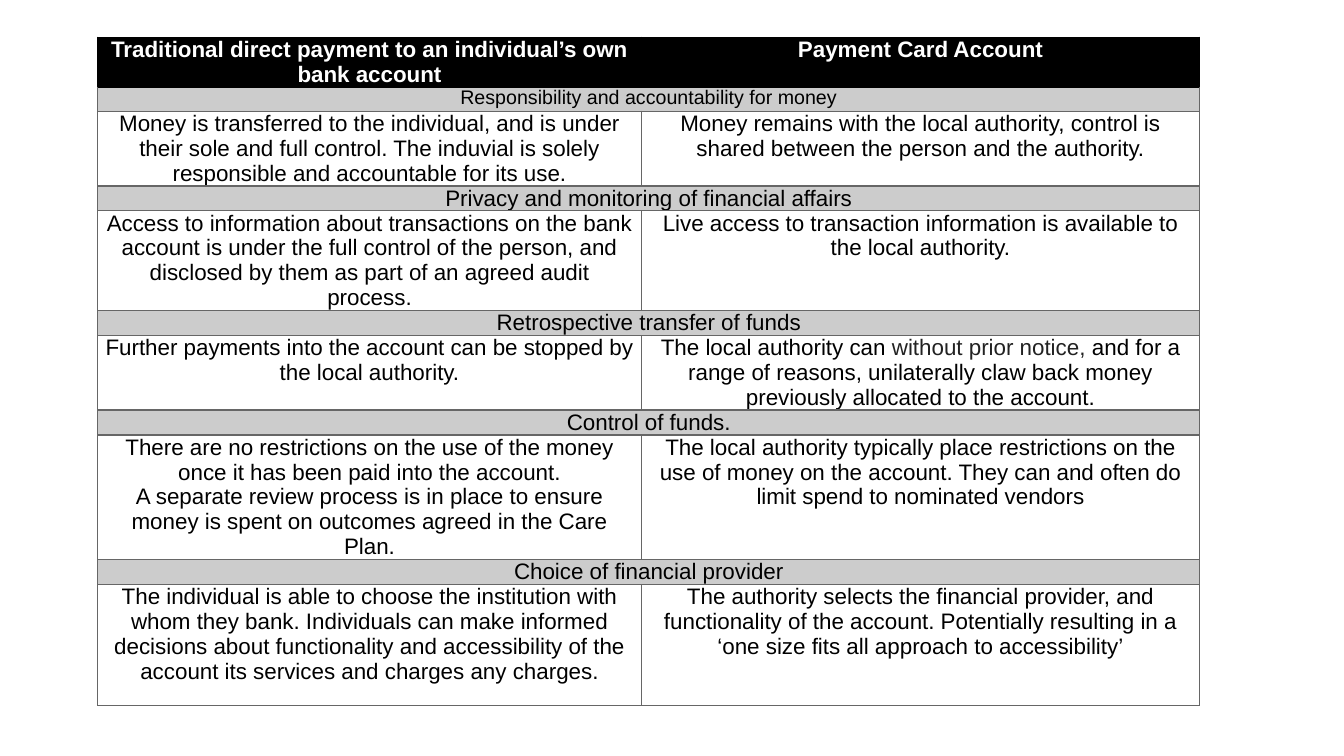
import pptx
import pptx.util
import pptx.dml.color
import pptx.enum.text
import pptx.oxml
import pptx.oxml.ns

BLACK = pptx.dml.color.RGBColor(0x00, 0x00, 0x00)
WHITE = pptx.dml.color.RGBColor(0xFF, 0xFF, 0xFF)
BAND = pptx.dml.color.RGBColor(0xCC, 0xCC, 0xCC)
RULE = pptx.dml.color.RGBColor(0x66, 0x66, 0x66)
SOFT = pptx.dml.color.RGBColor(0x22, 0x22, 0x22)

HEADINGS = ("Traditional direct payment to an individual’s own bank account",
            "Payment Card Account")
SOFT_PHRASE = "without prior notice,"

# Each topic: title, title size, text lines of room, left text, right text
TOPICS = [
    ("Responsibility and accountability for money", 14, 3,
     "Money is transferred to the individual, and is under their sole and full control. "
     "The induvial is solely responsible and accountable for its use.",
     "Money remains with the local authority, control is shared between the person "
     "and the authority."),
    ("Privacy and monitoring of financial affairs", 16, 4,
     "Access to information about transactions on the bank account is under the full "
     "control of the person, and disclosed by them as part of an agreed audit process.",
     "Live access to transaction information is available to the local authority."),
    ("Retrospective transfer of funds", 16, 3,
     "Further payments into the account can be stopped by the local authority.",
     "The local authority can without prior notice, and for a range of reasons, "
     "unilaterally claw back money previously allocated to the account."),
    ("Control of funds.", 16, 5,
     "There are no restrictions on the use of the money once it has been paid into "
     "the account.\nA separate review process is in place to ensure money is spent on "
     "outcomes agreed in the Care Plan.",
     "The local authority typically place restrictions on the use of money on the "
     "account. They can and often do limit spend to nominated vendors"),
    ("Choice of financial provider", 16, 5,
     "The individual is able to choose the institution with whom they bank. Individuals "
     "can make informed decisions about functionality and accessibility of the account "
     "its services and charges any charges.",
     "The authority selects the financial provider, and functionality of the account. "
     "Potentially resulting in a ‘one size fits all approach to accessibility’"),
]


class ComparisonPage:
    """Holds the style and the current slide; row heights count text lines."""
    font = "Arial"
    size = 16
    line = pptx.util.Inches(0.24)
    inset = pptx.util.Inches(0.07)

    def __init__(self, deck):
        self.page = deck.slides.add_slide(deck.slide_layouts[6])

    def table(self, left, top, columns, lines):
        columns = [pptx.util.Inches(width) for width in columns]
        frame = self.page.shapes.add_table(
            len(lines), len(columns), pptx.util.Inches(left), pptx.util.Inches(top),
            sum(columns), self.line * sum(lines))
        grid = frame.table
        grid.first_row = grid.horz_banding = False
        for column, width in zip(grid.columns, columns):
            column.width = width
        for row, count in zip(grid.rows, lines):
            row.height = self.line * count
        return grid

    def borders(self, cell, colors):
        properties = cell._tc.get_or_add_tcPr()
        for side, color in zip("LRTB", colors):
            properties.append(pptx.oxml.parse_xml(
                f'<a:ln{side} {pptx.oxml.ns.nsdecls("a")} w="12700"><a:solidFill>'
                f'<a:srgbClr val="{color}"/></a:solidFill></a:ln{side}>'))

    def cell(self, cell, text, fill=None, color=BLACK, size=size, bold=False,
             rule=RULE, top_rule=None):
        self.borders(cell, (rule, rule, top_rule or rule, rule))
        if fill is None:
            cell.fill.background()
        else:
            cell.fill.solid()
            cell.fill.fore_color.rgb = fill
        cell.margin_left = cell.margin_right = self.inset
        cell.margin_top = cell.margin_bottom = 0
        cell.text_frame.text = text
        for para in cell.text_frame.paragraphs:
            para.alignment = pptx.enum.text.PP_ALIGN.CENTER
            self.soften(para)
            for span in para.runs:
                span.font.name = self.font
                span.font.size = pptx.util.Pt(size)
                span.font.bold = bold
                span.font.color.rgb = SOFT if span.text == SOFT_PHRASE else color

    def soften(self, para):
        """Put the soft phrase in a run of its own."""
        before, phrase, after = para.text.partition(SOFT_PHRASE)
        if phrase:
            para.text = before
            for part in (phrase, after):
                para.add_run().text = part


def main():
    deck = pptx.Presentation()
    deck.slide_width = pptx.util.Inches(13.33)
    deck.slide_height = pptx.util.Inches(7.5)
    sheet = ComparisonPage(deck)

    # Table grid: two header lines, then a band and a text row per topic
    lines = [2]
    for topic in TOPICS:
        lines += [1, topic[2]]
    grid = sheet.table(0.97, 0.37, (5.39, 5.54), lines)

    # Header
    for column, heading in enumerate(HEADINGS):
        sheet.cell(grid.cell(0, column), heading, fill=BLACK, color=WHITE,
                   bold=True, rule=BLACK)

    # Topics
    for index, (title, size, _, *texts) in enumerate(TOPICS):
        row = 1 + 2 * index
        grid.cell(row, 0).merge(grid.cell(row, 1))
        for column, text in enumerate((title, "")):
            sheet.cell(grid.cell(row, column), text, fill=BAND, size=size,
                       top_rule=BLACK if index == 0 else RULE)
        for column, text in enumerate(texts):
            sheet.cell(grid.cell(row + 1, column), text)

    deck.save("out.pptx")


if __name__ == "__main__":
    main()
